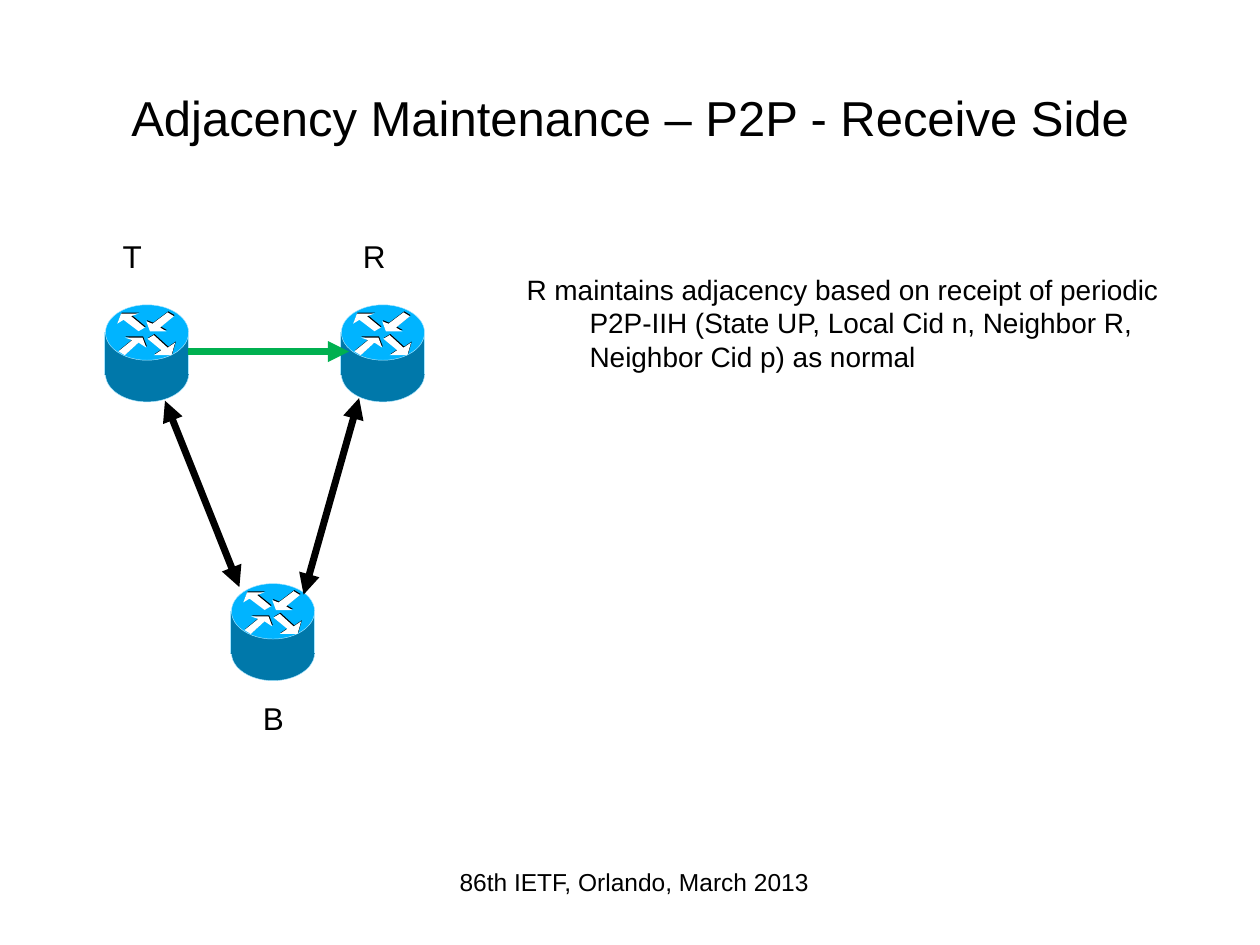
from lxml.etree import SubElement
from pptx import Presentation
from pptx.dml.color import RGBColor
from pptx.enum.shapes import MSO_CONNECTOR, MSO_SHAPE
from pptx.enum.text import MSO_ANCHOR, PP_ALIGN
from pptx.oxml.ns import qn
from pptx.util import Pt

color = RGBColor.from_string

presentation = Presentation()
presentation.slide_width, presentation.slide_height = Pt(720), Pt(540)
slide = presentation.slides.add_slide(presentation.slide_layouts[6])
shapes = slide.shapes


def add_text(text, left, top, width, height, size=18, align=PP_ALIGN.CENTER,
             anchor=MSO_ANCHOR.TOP, inset=(5.76, 2.88), hanging=0):
    frame = shapes.add_textbox(Pt(left), Pt(top), Pt(width), Pt(height)).text_frame
    frame.word_wrap = True
    frame.vertical_anchor = anchor
    frame.margin_left = frame.margin_right = Pt(inset[0])
    frame.margin_top = frame.margin_bottom = Pt(inset[1])
    paragraph = frame.paragraphs[0]
    paragraph.alignment = align
    if hanging:
        properties = paragraph._p.get_or_add_pPr()
        properties.set("marL", str(Pt(hanging)))
        properties.set("indent", str(-Pt(hanging)))
    run = paragraph.add_run()
    run.text = text
    run.font.name, run.font.size = "Arial", Pt(size)
    run.font.color.rgb = color("000000")


def add_line(start, end, line_color, width, arrowheads=()):
    connector = shapes.add_connector(
        MSO_CONNECTOR.STRAIGHT, *(Pt(value) for value in (*start, *end)))
    connector.line.color.rgb = color(line_color)
    connector.line.width = Pt(width)
    for end_name in arrowheads:
        SubElement(connector.line._get_or_add_ln(), qn(f"a:{end_name}"), type="triangle")
    SubElement(connector._element.spPr, qn("a:effectLst"))


# Title and explanation
add_text("Adjacency Maintenance – P2P - Receive Side", 36, 21.6, 648, 90, size=28,
         anchor=MSO_ANCHOR.MIDDLE, inset=(7.2, 3.6))
add_text("R maintains adjacency based on receipt of periodic P2P-IIH (State UP, "
         "Local Cid n, Neighbor R, Neighbor Cid p) as normal",
         295.2, 152.64, 391.68, 63.36, size=16, align=PP_ALIGN.LEFT, hanging=36)

# Router parts, relative to the router's top left corner
cylinder = [
    (MSO_SHAPE.OVAL, 0.5, 23.8, 47.5, 31.7, "0078AA", True),
    (MSO_SHAPE.RECTANGLE, 0, 16.4, 48, 23.8, "0078AA", False),
    (MSO_SHAPE.OVAL, 0.5, 0, 47.5, 31.7, "00B4FF", True),
]
router_arrows = [
    [(23, 13), (19.4, 15.1), (10.8, 8.6), (7.2, 10.8), (9.4, 5), (19.4, 5), (15.1, 6.5)],
    [(24.5, 19.4), (28.1, 17.3), (36, 24.5), (40.3, 21.6), (38.2, 28.8), (28.1, 28.8),
     (32.4, 25.9)],
    [(39.6, 6.5), (36, 4.3), (27.4, 10.8), (23.8, 9.4), (25.9, 15.1), (35.3, 15.1),
     (31.7, 13)],
    [(7.9, 26.6), (11.5, 28.8), (19.4, 21.6), (23.8, 24.5), (21.6, 18.7), (11.5, 18.7),
     (15.8, 20.2)],
]
arrow_layers = [("000000", 0.4, -0.6), ("FFFFFF", 0, 0)]

# Routers T, R and B
for router_left, router_top in [(59.8, 174.2), (194.6, 174.2), (131.8, 333.5)]:
    for kind, left, top, width, height, fill, outlined in cylinder:
        shape = shapes.add_shape(kind, Pt(router_left + left), Pt(router_top + top),
                                 Pt(width), Pt(height))
        shape.shadow.inherit = False
        shape.fill.solid()
        shape.fill.fore_color.rgb = color(fill)
        if outlined:
            shape.line.color.rgb = color("AAE6FF")
            shape.line.width = Pt(0.25)
        else:
            shape.line.fill.background()

    for fill, shift_x, shift_y in arrow_layers:
        for outline in router_arrows:
            points = [(Pt(router_left + x + shift_x), Pt(router_top + y + shift_y))
                      for x, y in outline]
            builder = shapes.build_freeform(*points[0])
            builder.add_line_segments(points[1:], close=True)
            arrow = builder.convert_to_shape()
            arrow.shadow.inherit = False
            arrow.fill.solid()
            arrow.fill.fore_color.rgb = color(fill)
            arrow.line.fill.background()

    for side in (0, 47.8):
        add_line((router_left + side, router_top + 15.8),
                 (router_left + side, router_top + 39.4), "AAE6FF", 0.25)

# Router names
for name, left, top, width in [("R", 195.84, 132.48, 36), ("T", 47.52, 132.48, 56.16),
                               ("B", 128.16, 396.72, 56.16)]:
    add_text(name, left, top, width, 56.16)

# Links between the routers
both_ends = ("headEnd", "tailEnd")
add_line((94.3, 229), (136.8, 335.5), "000000", 4, both_ends)
add_line((173.5, 339.8), (205.2, 227.5), "000000", 4, both_ends)
add_line((107.3, 200.9), (199.4, 200.9), "00B050", 4, ("tailEnd",))

# Footer
add_text("86th IETF, Orlando, March 2013", 206.64, 491.76, 311.76, 37.44, size=14,
         inset=(7.2, 3.6))

presentation.save("out.pptx")
